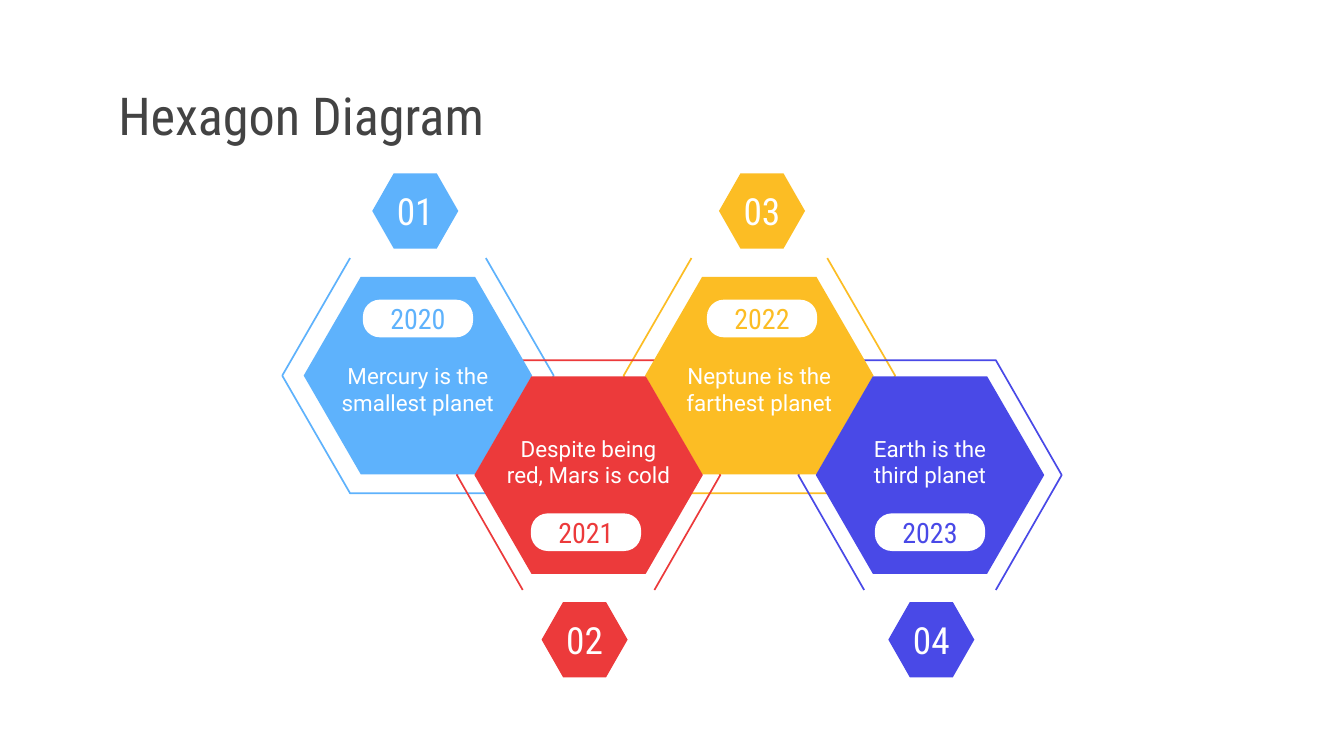
from collections import namedtuple
from dataclasses import dataclass

from pptx import Presentation
from pptx.dml.color import RGBColor
from pptx.enum.shapes import MSO_SHAPE as Preset
from pptx.enum.text import MSO_ANCHOR as Anchor, MSO_AUTO_SIZE as Fit, PP_ALIGN as Align
from pptx.util import Inches, Pt


@dataclass(frozen=True)
class Theme:
    head: str = "Roboto Condensed"
    body: str = "Roboto"
    dark: str = "434343"
    white: str = "FFFFFF"
    title: int = 28
    number: int = 20
    year: int = 15
    label: int = 12
    line: float = 0.91


THEME = Theme()
Box = namedtuple("Box", "x y w h")
# pill and badge are the left edges of the year and the number, from the hexagon
Stage = namedtuple("Stage", "number year lines color pill badge")

STAGES = [
    Stage("01", "2020", ["Mercury is the smallest planet"], "5EB2FC", 0.44, 0.51),
    Stage("02", "2021", ["Despite being", "red, Mars is cold"], "EC3A3B", 0.42, 0.50),
    Stage("03", "2022", ["Neptune is the farthest planet"], "FCBD24", 0.46, 0.55),
    Stage("04", "2023", ["Earth is the", "third planet"], "4949E7", 0.44, 0.54),
]
LEFT, STEP = 2.26, 1.27
HIGH, LOW = 2.06, 2.80
WIDE, TALL = 1.70, 1.47


def rgb(color):
    return RGBColor.from_string(color)


def write(shape, lines, font, size, color, pads=(0, 0, 0, 0), align=Align.CENTER):
    """Fill a shape with lines of text; pads run left, top, right, bottom."""
    frame = shape.text_frame
    frame.word_wrap = True
    frame.auto_size = Fit.NONE
    frame.vertical_anchor = Anchor.MIDDLE
    (frame.margin_left, frame.margin_top,
     frame.margin_right, frame.margin_bottom) = map(Inches, pads)
    para = frame.paragraphs[0]
    para.alignment = align
    for i, line in enumerate(lines):
        if i:
            para.add_line_break()
        run = para.add_run()
        run.text = line
        run.font.name, run.font.size = font, Pt(size)
        run.font.color.rgb = rgb(color)


def paint(shape, color):
    shape.shadow.inherit = False
    shape.fill.solid()
    shape.fill.fore_color.rgb = rgb(color)
    shape.line.fill.background()


def hexagon(shapes, box, close=True, flip=False):
    """Trace a hexagon from its top right corner, or bottom right if flipped."""
    x, y, w, h = box
    spots = [(0.75, 0), (1, 0.5), (0.75, 1), (0.25, 1), (0, 0.5), (0.25, 0)]
    points = [(Inches(x + u * w), Inches(y + (1 - v if flip else v) * h))
              for u, v in spots]
    path = shapes.build_freeform(*points[0])
    path.add_line_segments(points[1:], close=close)
    shape = path.convert_to_shape()
    shape.shadow.inherit = False
    return shape


def add_title(slide, box):
    title = slide.shapes.title
    title.left, title.top, title.width, title.height = map(Inches, box)
    write(title, ["Hexagon Diagram"], THEME.head, THEME.title, THEME.dark,
          (0.1, 0.1, 0.1, 0.1), Align.LEFT)


def add_halo(slide, stage, box, low):
    """Draw the open outline around a stage, with its gap towards the number."""
    dx, dy = (0.13, 0.12) if low else (0.16, 0.14)
    around = Box(box.x - dx, box.y - dy, box.w + 2 * dx, box.h + 2 * dy)
    halo = hexagon(slide.shapes, around, close=False, flip=low)
    halo.fill.background()
    halo.line.color.rgb = rgb(stage.color)
    halo.line.width = Pt(THEME.line)


def add_stage(slide, stage, box, low):
    shapes = slide.shapes.add_group_shape().shapes
    cell = hexagon(shapes, box)
    paint(cell, stage.color)
    pads = (0.2, 0.1, 0.2, 0.3) if low else (0.2, 0.3, 0.2, 0.1)
    write(cell, stage.lines, THEME.body, THEME.label, THEME.white, pads)

    top = box.y + (1.02 if low else 0.17)
    pill = shapes.add_shape(Preset.ROUNDED_RECTANGLE, Inches(box.x + stage.pill),
                            Inches(top), Inches(0.82), Inches(0.28))
    pill.adjustments[0] = 0.45
    paint(pill, THEME.white)
    write(pill, [stage.year], THEME.head, THEME.year, stage.color)

    top = box.y + (1.68 if low else -0.77)
    badge = hexagon(shapes, Box(box.x + stage.badge, top, 0.64, 0.56))
    paint(badge, stage.color)
    write(badge, [stage.number], THEME.head, THEME.number, THEME.white)


def main():
    deck = Presentation()
    deck.slide_width, deck.slide_height = Inches(10), Inches(10 * 9 / 16)
    slide = deck.slides.add_slide(deck.slide_layouts[5])
    add_title(slide, Box(0.78, 0.59, 8.45, 0.53))

    places = []
    for i, stage in enumerate(STAGES):
        low = i % 2 == 1
        box = Box(LEFT + i * STEP, LOW if low else HIGH, WIDE, TALL)
        places.append((stage, box, low))
    places.sort(key=lambda place: place[2])  # the low row lies in front
    for draw in (add_halo, add_stage):
        for place in places:
            draw(slide, *place)
    deck.save("out.pptx")


if __name__ == "__main__":
    main()
